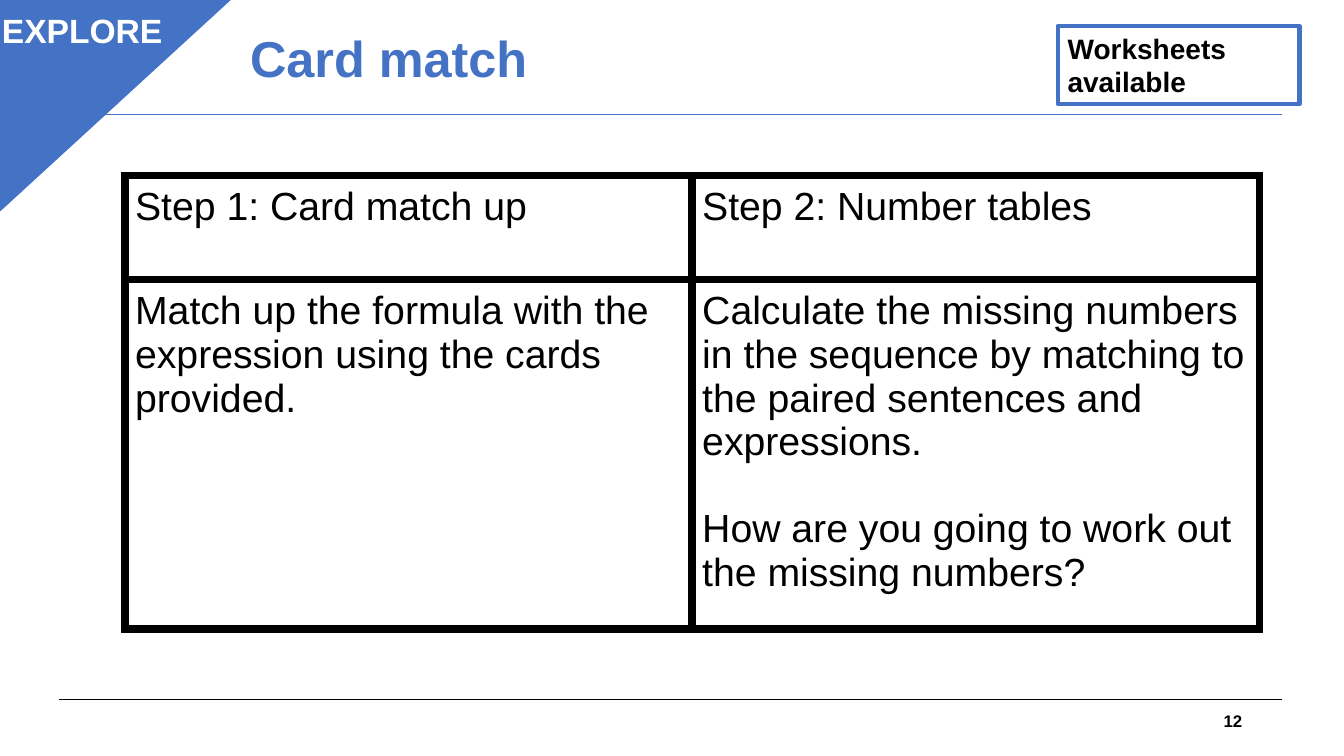
from dataclasses import dataclass

from lxml import etree
from pptx import Presentation
from pptx.dml.color import RGBColor
from pptx.enum.shapes import MSO_CONNECTOR, MSO_SHAPE
from pptx.enum.text import MSO_ANCHOR, MSO_AUTO_SIZE, PP_ALIGN
from pptx.oxml.ns import qn
from pptx.util import Inches, Pt

STRAIGHT = MSO_CONNECTOR.STRAIGHT
RECTANGLE = MSO_SHAPE.RECTANGLE
TRIANGLE = MSO_SHAPE.ISOSCELES_TRIANGLE
TOP, MIDDLE = MSO_ANCHOR.TOP, MSO_ANCHOR.MIDDLE
LEFT, CENTER, RIGHT = PP_ALIGN.LEFT, PP_ALIGN.CENTER, PP_ALIGN.RIGHT
NO_AUTOFIT = MSO_AUTO_SIZE.NONE
TITLE_ONLY = 5


@dataclass(frozen=True)
class Theme:
    font: str = "Arial"
    accent: str = "4472C4"
    ink: str = "000000"
    paper: str = "FFFFFF"
    title: int = 36
    table: int = 28
    corner: int = 24
    badge: int = 20
    number: int = 12


class LessonSlide:
    def __init__(self, slide, theme):
        self.slide = slide
        self.theme = theme

    def fill_text(self, frame, text, size, color, bold=True, align=LEFT, anchor=TOP):
        frame.text = text
        frame.word_wrap = True
        frame.vertical_anchor = anchor
        for paragraph in frame.paragraphs:
            paragraph.alignment = align
            for run in paragraph.runs:
                run.font.name = self.theme.font
                run.font.size = Pt(size)
                run.font.bold = bold
                run.font.color.rgb = RGBColor.from_string(color)

    def title(self, text, box):
        shape = self.slide.shapes.title
        shape.left, shape.top, shape.width, shape.height = map(Inches, box)
        frame = shape.text_frame
        self.fill_text(frame, text, self.theme.title, self.theme.accent, anchor=MIDDLE)
        frame.auto_size = NO_AUTOFIT
        frame.paragraphs[0].line_spacing = 0.9

    def rule(self, y, color):
        line = self.slide.shapes.add_connector(
            STRAIGHT, Inches(0.59), Inches(y), Inches(12.72), Inches(y))
        line.line.color.rgb = RGBColor.from_string(color)
        line.line.width = Pt(0.75)
        etree.SubElement(line._element.spPr, qn("a:effectLst"))

    def label(self, text, box, size, color, align, anchor=TOP):
        shape = self.slide.shapes.add_textbox(*map(Inches, box))
        self.fill_text(shape.text_frame, text, size, color, align=align, anchor=anchor)

    def accent_shape(self, kind, box, line_width):
        shape = self.slide.shapes.add_shape(kind, *map(Inches, box))
        shape.shadow.inherit = False
        shape.fill.background()
        shape.line.color.rgb = RGBColor.from_string(self.theme.accent)
        shape.line.width = Pt(line_width)
        return shape

    def badge(self, text, box):
        shape = self.accent_shape(RECTANGLE, box, 3)
        self.fill_text(shape.text_frame, text, self.theme.badge, self.theme.ink)

    def corner(self, text, box, text_box):
        shape = self.accent_shape(TRIANGLE, box, 1)
        shape.adjustments[0] = 0
        shape._element.spPr.xfrm.set("flipV", "1")
        shape.fill.solid()
        shape.fill.fore_color.rgb = RGBColor.from_string(self.theme.accent)
        self.label(text, text_box, self.theme.corner, self.theme.paper, CENTER)

    def border(self, cell, width):
        properties = cell._tc.get_or_add_tcPr()
        for position, side in enumerate(("lnL", "lnR", "lnT", "lnB")):
            line = etree.Element(qn(f"a:{side}"), w=str(Pt(width)))
            fill = etree.SubElement(line, qn("a:solidFill"))
            etree.SubElement(fill, qn("a:srgbClr"), val=self.theme.ink)
            properties.insert(position, line)

    def table(self, rows, box, heights):
        table = self.slide.shapes.add_table(
            len(rows), len(rows[0]), *map(Inches, box)).table
        table.first_row = table.horz_banding = False
        for row, height, texts in zip(table.rows, heights, rows):
            row.height = Inches(height)
            for cell, text in zip(row.cells, texts):
                self.fill_text(cell.text_frame, text, self.theme.table,
                               self.theme.ink, bold=False)
                cell.margin_left = cell.margin_right = Inches(0.1)
                cell.margin_top = cell.margin_bottom = Inches(0.1)
                for paragraph in cell.text_frame.paragraphs[1:]:
                    paragraph.space_before = Pt(31)
                cell.fill.background()
                self.border(cell, 6)


def main():
    presentation = Presentation()
    presentation.slide_width = Inches(13.33)
    presentation.slide_height = Inches(7.5)
    theme = Theme()
    slide = presentation.slides.add_slide(presentation.slide_layouts[TITLE_ONLY])
    lesson = LessonSlide(slide, theme)

    lesson.rule(6.94, theme.ink)
    lesson.rule(1.14, theme.accent)
    lesson.title("Card match", (2.38, 0.05, 3.46, 1.11))
    lesson.label("12", (9.42, 6.95, 3, 0.4), theme.number, theme.ink, RIGHT, MIDDLE)
    lesson.badge("Worksheets\vavailable", (10.49, 0.26, 2.4, 0.77))
    lesson.table(
        [
            ("Step 1: Card match up", "Step 2: Number tables"),
            ("Match up the formula with the expression using the cards provided.",
             "Calculate the missing numbers in the sequence by matching to the "
             "paired sentences and expressions.\n"
             "How are you going to work out the missing numbers?"),
        ],
        (1.24, 1.74, 11.25, 4.5), (1.03, 3.47))
    lesson.corner("EXPLORE", (0, -0.01, 2.29, 2.1), (-0.11, 0.05, 1.85, 0.5))
    presentation.save("out.pptx")


if __name__ == "__main__":
    main()
